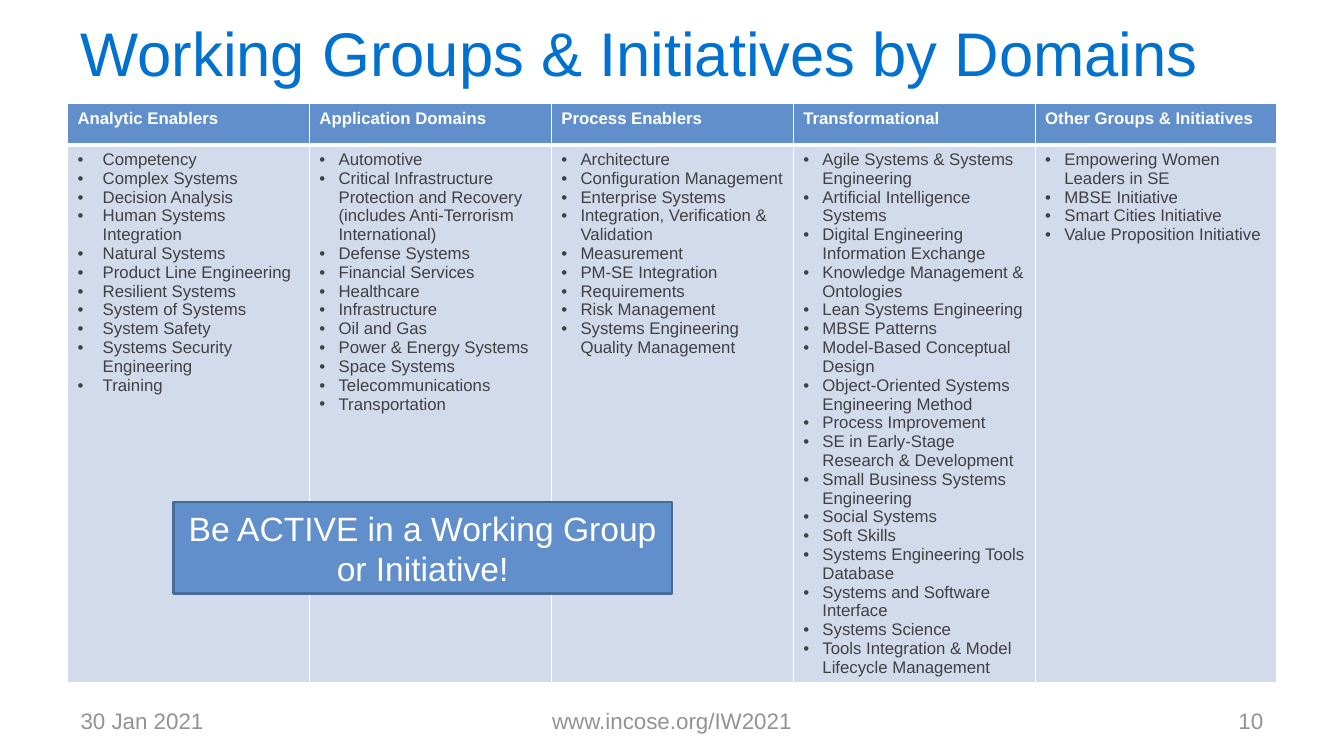
"""Build the slide of working groups and initiatives, sorted by domain."""
from dataclasses import dataclass

from lxml import etree
from pptx import Presentation, util as u
from pptx.dml.color import RGBColor
from pptx.enum import shapes, text
from pptx.oxml import ns

W, H = u.Inches(13.34), u.Inches(7.5)
BLUE = RGBColor(0x00, 0x71, 0xCE)
STEEL = RGBColor(0x61, 0x8F, 0xCB)
NAVY = RGBColor(0x48, 0x6A, 0x96)
PALE = RGBColor(0xD2, 0xDB, 0xEC)
INK = RGBColor(0x41, 0x40, 0x42)
GREY = RGBColor(0x93, 0x93, 0x93)
WHITE = RGBColor(0xFF, 0xFF, 0xFF)
LEFT, CENTER, RIGHT = text.PP_ALIGN.LEFT, text.PP_ALIGN.CENTER, text.PP_ALIGN.RIGHT


@dataclass(frozen=True)
class Box:
    """A place on the slide, in percent of its width and height."""
    x: float
    y: float
    w: float
    h: float

    def emu(self) -> tuple[int, ...]:
        """Return left, top, width and height in EMU."""
        return tuple(round(share * side / 100) for share, side in
                     zip((self.x, self.y, self.w, self.h), (W, H, W, H)))


@dataclass(frozen=True)
class Label:
    """A line of text on the slide."""
    wording: str
    box: Box
    size: int
    color: RGBColor
    align: text.PP_ALIGN = LEFT


@dataclass(frozen=True)
class Domain:
    """A table column: heading, groups and bullet indent in inches."""
    name: str
    groups: tuple[str, ...]
    indent: float = 0.19


MARGIN, FOOT_Y, FOOT_H = 5.02, 92.67, 5.33
COL_W, HEAD_H, BODY_H = 18, 5.47, 71.07
LABELS = (
    Label("Working Groups & Initiatives by Domains", Box(MARGIN, 0.8, 89.88, 12.13), 44, BLUE),
    Label("30 Jan 2021", Box(MARGIN, FOOT_Y, 23.31, FOOT_H), 16, GREY),
    Label("www.incose.org/IW2021", Box(34.18, FOOT_Y, 31.63, FOOT_H), 16, GREY, CENTER),
    Label("10", Box(71.66, FOOT_Y, 23.31, FOOT_H), 16, GREY, RIGHT),
)
CALLOUT = Label("Be ACTIVE in a Working Group or Initiative!",
                Box(12.89, 66.4, 37.11, 12.13), 24, WHITE, CENTER)
DOMAINS = (
    Domain("Analytic Enablers", (
        "Competency", "Complex Systems", "Decision Analysis", "Human Systems Integration",
        "Natural Systems", "Product Line Engineering", "Resilient Systems",
        "System of Systems", "System Safety", "Systems Security Engineering",
        "Training"), 0.25),
    Domain("Application Domains", (
        "Automotive",
        "Critical Infrastructure Protection and Recovery (includes Anti-Terrorism International)",
        "Defense Systems", "Financial Services", "Healthcare", "Infrastructure",
        "Oil and Gas", "Power & Energy Systems", "Space Systems", "Telecommunications",
        "Transportation")),
    Domain("Process Enablers", (
        "Architecture", "Configuration Management", "Enterprise Systems",
        "Integration, Verification & Validation", "Measurement", "PM-SE Integration",
        "Requirements", "Risk Management", "Systems Engineering Quality Management")),
    Domain("Transformational", (
        "Agile Systems & Systems Engineering", "Artificial Intelligence Systems",
        "Digital Engineering Information Exchange", "Knowledge Management & Ontologies",
        "Lean Systems Engineering", "MBSE Patterns", "Model-Based Conceptual Design",
        "Object-Oriented Systems Engineering Method", "Process Improvement",
        "SE in Early-Stage Research & Development", "Small Business Systems Engineering",
        "Social Systems", "Soft Skills", "Systems Engineering Tools Database",
        "Systems and Software Interface", "Systems Science",
        "Tools Integration & Model Lifecycle Management")),
    Domain("Other Groups & Initiatives", (
        "Empowering Women Leaders in SE", "MBSE Initiative", "Smart Cities Initiative",
        "Value Proposition Initiative")),
)


def apply(target, formats: dict) -> None:
    """Set every attribute in formats on target."""
    for name, value in formats.items():
        setattr(target, name, value)


def write(p, wording: str, size: int, color: RGBColor, bold: bool = False) -> None:
    """Add one formatted run to a paragraph."""
    r = p.add_run()
    r.text = wording
    apply(r.font, {"name": "Arial", "size": u.Pt(size), "bold": bold})
    r.font.color.rgb = color


def add_label(s, label: Label) -> None:
    """Draw a text box holding one label."""
    tf = s.shapes.add_textbox(*label.box.emu()).text_frame
    apply(tf, {"word_wrap": True, "vertical_anchor": text.MSO_ANCHOR.MIDDLE,
               "margin_left": u.Inches(0.13), "margin_right": u.Inches(0.13),
               "margin_top": u.Inches(0.07), "margin_bottom": u.Inches(0.07)})
    p = tf.paragraphs[0]
    p.alignment = label.align
    write(p, label.wording, label.size, label.color)


def add_callout(s, label: Label) -> None:
    """Draw the framed call to action."""
    sp = s.shapes.add_shape(shapes.MSO_SHAPE.RECTANGLE, *label.box.emu())
    sp.shadow.inherit = False
    sp.fill.solid()
    sp.fill.fore_color.rgb = STEEL
    sp.line.color.rgb = NAVY
    sp.line.width = u.Pt(2)
    tf = sp.text_frame
    apply(tf, {"word_wrap": True, "vertical_anchor": text.MSO_ANCHOR.MIDDLE})
    p = tf.paragraphs[0]
    p.alignment = label.align
    write(p, label.wording, label.size, label.color)


def style_cell(cell, fill: RGBColor, edges: dict[str, int]) -> None:
    """Give a cell white borders of the given point widths and a fill."""
    tc_pr = cell._tc.get_or_add_tcPr()
    for edge, width in edges.items():
        ln = etree.SubElement(tc_pr, ns.qn(f"a:{edge}"), w=str(u.Pt(width)))
        solid = etree.SubElement(ln, ns.qn("a:solidFill"))
        etree.SubElement(solid, ns.qn("a:srgbClr"), val=str(WHITE))
    cell.fill.solid()
    cell.fill.fore_color.rgb = fill


def add_bullet(p, indent: float) -> None:
    """Give a paragraph a hanging bullet."""
    p_pr = p._p.get_or_add_pPr()
    p_pr.set("marL", str(u.Inches(indent)))
    p_pr.set("indent", str(-u.Inches(indent)))
    etree.SubElement(p_pr, ns.qn("a:buFont"), typeface="Arial")
    etree.SubElement(p_pr, ns.qn("a:buChar"), char="•")


def add_domains(s, domains: tuple[Domain, ...]) -> None:
    """Draw the table with one column for each domain."""
    box = Box(MARGIN, 13.73, COL_W * len(domains), HEAD_H + BODY_H)
    table = s.shapes.add_table(2, len(domains), *box.emu()).table
    for row, share in zip(table.rows, (HEAD_H, BODY_H)):
        row.height = round(H * share / 100)
    for col, domain in enumerate(domains):
        head, body = table.cell(0, col), table.cell(1, col)
        style_cell(head, STEEL, {"lnL": 1, "lnR": 1, "lnT": 1, "lnB": 3})
        style_cell(body, PALE, {"lnL": 1, "lnR": 1, "lnT": 3, "lnB": 1})
        write(head.text_frame.paragraphs[0], domain.name, 12, WHITE, True)
        tf = body.text_frame
        for i, group in enumerate(domain.groups):
            p = tf.add_paragraph() if i else tf.paragraphs[0]
            add_bullet(p, domain.indent)
            write(p, group, 12, INK)


def main() -> None:
    """Build and save the slide."""
    prs = Presentation()
    apply(prs, {"slide_width": W, "slide_height": H})
    s = prs.slides.add_slide(prs.slide_layouts[6])
    add_domains(s, DOMAINS)
    for label in LABELS:
        add_label(s, label)
    add_callout(s, CALLOUT)
    prs.save("out.pptx")


if __name__ == "__main__":
    main()
